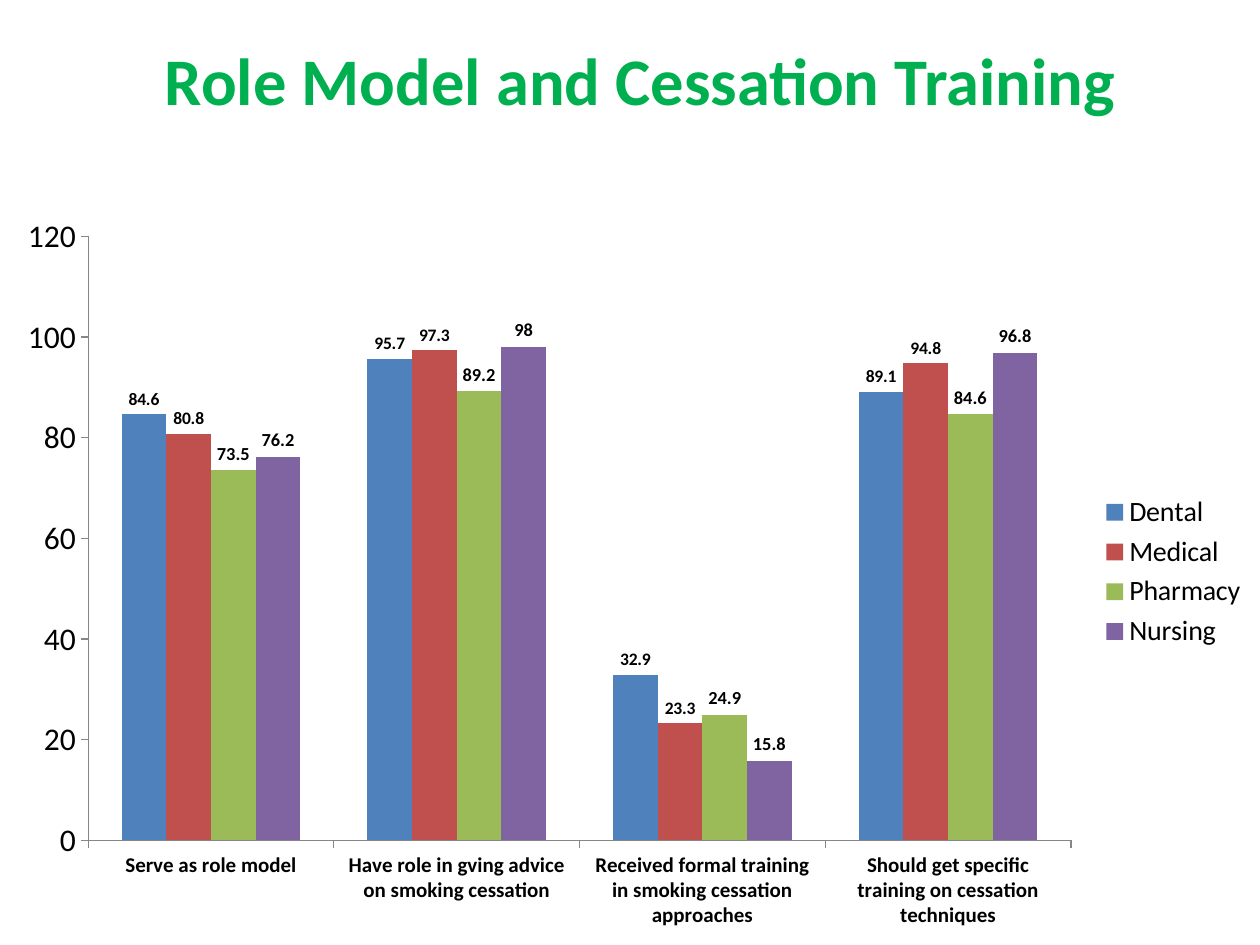
"""Build the slide on role models and cessation training."""
import lxml.etree
import pptx
import pptx.chart.data
import pptx.dml.color
import pptx.enum.chart
import pptx.enum.text
import pptx.oxml.ns
import pptx.util
from pptx.util import Cm

RGBColor = pptx.dml.color.RGBColor
GREEN = RGBColor(0x00, 0xB0, 0x50)
BLACK = RGBColor(0x00, 0x00, 0x00)
GREY = RGBColor(0x86, 0x86, 0x86)
DENTAL = RGBColor(0x4F, 0x81, 0xBD)
MEDICAL = RGBColor(0xC0, 0x50, 0x4D)
PHARMACY = RGBColor(0x9B, 0xBB, 0x59)
NURSING = RGBColor(0x80, 0x64, 0xA2)

CATEGORIES = [
    "Serve as role model",
    "Have role in gving advice on smoking cessation",
    "Received formal training in smoking cessation approaches",
    "Should get specific training on cessation techniques",
]
SERIES = [
    ("Dental", (84.6, 95.7, 32.9, 89.1), DENTAL, 10),
    ("Medical", (80.8, 97.3, 23.3, 94.8), MEDICAL, 10),
    ("Pharmacy", (73.5, 89.2, 24.9, 84.6), PHARMACY, 10.5),
    ("Nursing", (76.2, 98, 15.8, 96.8), NURSING, 10.5),
]


class SlideBuilder:
    font_name = "Calibri"

    def __init__(self, prs):
        self.s = prs.slides.add_slide(prs.slide_layouts[5])

    def style(self, font, size, color=BLACK, bold=False):
        font.name = self.font_name
        font.size = pptx.util.Pt(size)
        font.bold = bold
        font.color.rgb = color

    def title(self, text, left, top, width, height):
        sp = self.s.shapes.title
        sp.left, sp.top, sp.width, sp.height = left, top, width, height
        tf = sp.text_frame
        tf.text = text
        tf.word_wrap = True
        tf.vertical_anchor = pptx.enum.text.MSO_ANCHOR.MIDDLE
        p = tf.paragraphs[0]
        p.alignment = pptx.enum.text.PP_ALIGN.CENTER
        self.style(p.runs[0].font, 38, GREEN, True)

    def column_chart(self, left, top, width, height):
        data = pptx.chart.data.CategoryChartData()
        data.categories = CATEGORIES
        for name, values, _, _ in SERIES:
            data.add_series(name, values)
        chart = self.s.shapes.add_chart(
            pptx.enum.chart.XL_CHART_TYPE.COLUMN_CLUSTERED,
            left, top, width, height, data).chart
        self.style(chart.font, 18)
        chart.has_title = False
        chart.has_legend = True
        chart.legend.position = pptx.enum.chart.XL_LEGEND_POSITION.RIGHT
        chart.legend.include_in_layout = False
        self.style(chart.legend.font, 16)
        plot = chart.plots[0]
        plot.gap_width = 150
        plot.overlap = 0
        plot.vary_by_categories = False
        for series, (_, _, color, size) in zip(plot.series, SERIES):
            self.series(series, color, size)
        for axis in (chart.category_axis, chart.value_axis):
            self.axis(axis)
        self.style(chart.category_axis.tick_labels.font, 12, bold=True)
        chart.value_axis.minimum_scale = 0
        chart.value_axis.maximum_scale = 120
        chart.value_axis.major_unit = 20
        self.plot_layout(chart, x=0.07, y=0.05, w=0.78, h=0.81)

    def series(self, series, color, size):
        series.invert_if_negative = False
        series.format.fill.solid()
        series.format.fill.fore_color.rgb = color
        labels = series.data_labels
        labels.show_value = True
        labels.position = pptx.enum.chart.XL_LABEL_POSITION.OUTSIDE_END
        self.style(labels.font, size, bold=True)

    def axis(self, axis):
        axis.has_major_gridlines = False
        axis.major_tick_mark = pptx.enum.chart.XL_TICK_MARK.OUTSIDE
        axis.minor_tick_mark = pptx.enum.chart.XL_TICK_MARK.NONE
        axis.format.line.color.rgb = GREY
        axis.format.line.width = pptx.util.Pt(0.75)
        self.style(axis.tick_labels.font, 18)

    def plot_layout(self, chart, **fractions):
        qn = pptx.oxml.ns.qn
        area = chart.element.find(".//" + qn("c:plotArea"))
        for old in area.findall(qn("c:layout")):
            area.remove(old)
        layout = lxml.etree.Element(qn("c:layout"))
        area.insert(0, layout)
        manual = lxml.etree.SubElement(layout, qn("c:manualLayout"))
        settings = {"layoutTarget": "inner", "xMode": "edge", "yMode": "edge", **fractions}
        for tag, value in settings.items():
            lxml.etree.SubElement(manual, qn("c:" + tag)).set("val", str(value))


def main():
    prs = pptx.Presentation()
    prs.slide_width, prs.slide_height = Cm(25.4), Cm(19.05)
    slide = SlideBuilder(prs)
    slide.title("Role Model and Cessation Training", Cm(1.9), Cm(0), Cm(22.02), Cm(3.18))
    slide.column_chart(Cm(0), Cm(4.01), Cm(25.4), Cm(15.04))
    prs.save("out.pptx")


if __name__ == "__main__":
    main()
